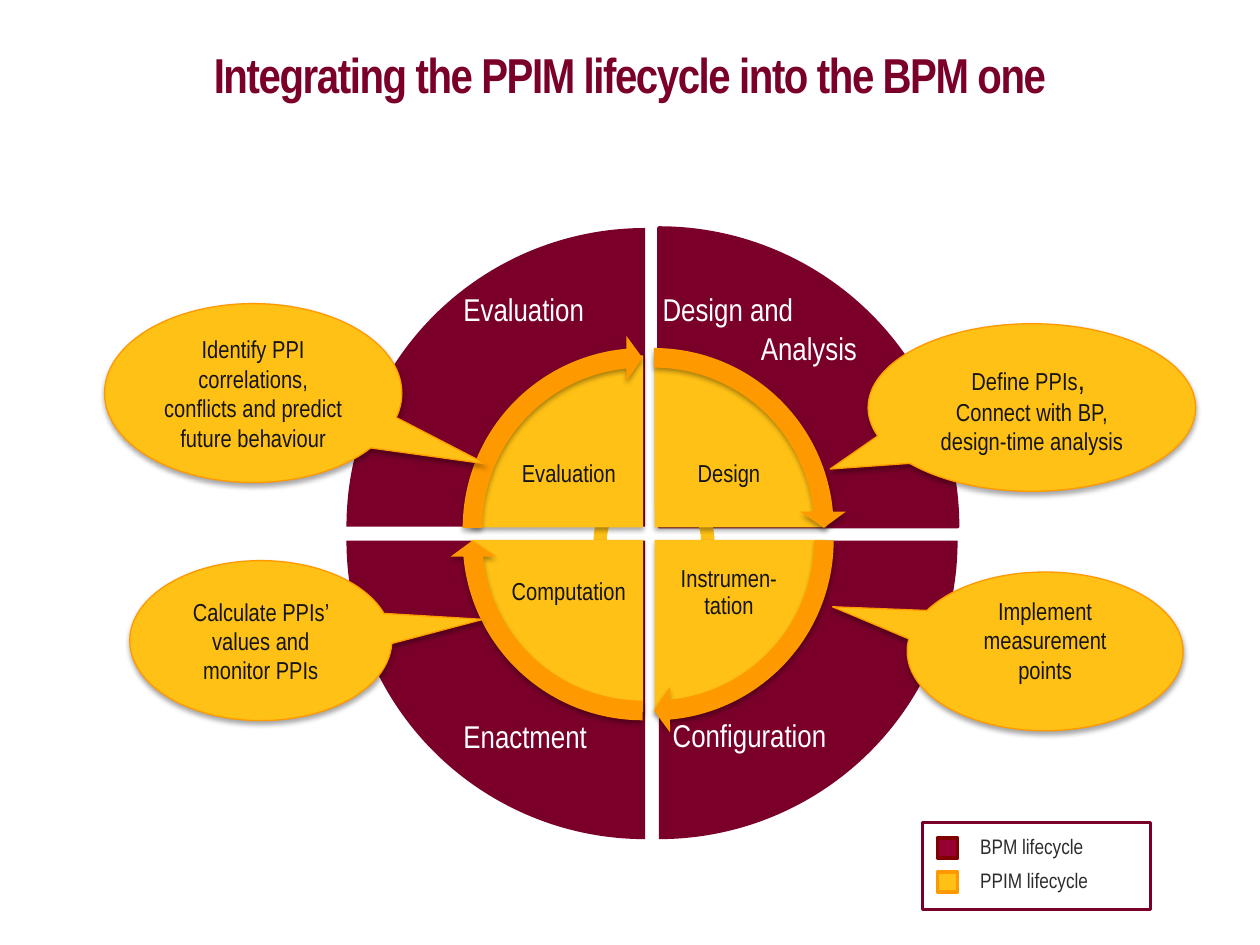
from lxml import etree
from pptx import Presentation
from pptx.dml.color import RGBColor
from pptx.enum.shapes import MSO_SHAPE
from pptx.enum.text import MSO_ANCHOR, PP_ALIGN
from pptx.oxml.ns import qn
from pptx.util import Inches, Pt

WEDGE, PIE, ARROW = MSO_SHAPE.PIE_WEDGE, MSO_SHAPE.PIE, MSO_SHAPE.CIRCULAR_ARROW
CALLOUT, RECTANGLE = MSO_SHAPE.OVAL_CALLOUT, MSO_SHAPE.RECTANGLE
LEFT, CENTER = PP_ALIGN.LEFT, PP_ALIGN.CENTER
TOP, MIDDLE = MSO_ANCHOR.TOP, MSO_ANCHOR.MIDDLE

FONT = "Arial Narrow"
COLORS = {
    "wine": "7A0029", "wine_edge": "7C002C", "key_wine": "960032", "key_edge": "800000",
    "gold": "FFC115", "orange": "FF9900", "white": "FFFFFF",
    "ink": "141414", "grey": "2C2C2C", "black": "000000",
}

TITLE = "Integrating the PPIM lifecycle into the BPM one"
WEDGES = [
    (2.75, 1.81, None),
    (5.23, 1.81, ("wine_edge", 2)),
    (5.23, 4.29, None),
    (2.75, 4.29, None),
]
HUB_ARROWS = [(4.62, 270), (4.94, 90)]
PPIM_PHASES = [
    ("Design", "right", "top"),
    ("Instrumen-tation", "right", "bottom"),
    ("Computation", "left", "bottom"),
    ("Evaluation", "left", "top"),
]
PIE_LEFT = {"left": 3.74, "right": 3.83}
PIE_TOP = {"top": 2.82, "bottom": 2.92}
LABEL_LEFT = {"left": 4.01, "right": 5.28}
LABEL_TOP = {"top": 3.39, "bottom": 4.33}
QUARTER, FULL_TURN = 54, 216
BPM_PHASES = [
    ("Design and", 5.16, 2.25),
    ("Analysis", 5.94, 2.56),
    ("Configuration", 5.24, 5.63),
    ("Enactment", 3.58, 5.64),
    ("Evaluation", 3.58, 2.25),
]
LEGEND = [
    ("BPM lifecycle", "key_wine", "key_edge"),
    ("PPIM lifecycle", "gold", "orange"),
]
CALLOUTS = [
    ([[("Define PPIs", 14), (", ", 18)], [("Connect with BP, design-time analysis", 14)]],
     (6.89, 2.57, 2.6, 1.33), (-0.616, 0.367), 0.05),
    ([[("Implement measurement points", 14)]],
     (7.2, 4.54, 2.19, 1.26), (-0.771, -0.281), 0.23),
    ([[("Calculate PPIs’ values and monitor PPIs", 14)]],
     (1.03, 4.45, 2.08, 1.27), (0.848, -0.133), 0.05),
    ([[("Identify PPI correlations, conflicts and predict future behaviour", 14)]],
     (0.83, 2.41, 2.36, 1.42), (0.783, 0.396), 0.05),
]


def color(name):
    return RGBColor.from_string(COLORS[name])


def add_shadow(shape):
    effects = shape._element.spPr.find(qn("a:effectLst"))
    shadow = etree.SubElement(effects, qn("a:outerShdw"), blurRad=str(Pt(3.1)),
                              dist=str(Pt(1.8)), dir="5400000", rotWithShape="0")
    tint = etree.SubElement(shadow, qn("a:srgbClr"), val=COLORS["black"])
    etree.SubElement(tint, qn("a:alpha"), val="35000")


def draw(page, kind, place, fill=None, line=None, adjust=(), rotation=0, shadow=False):
    shape = page.shapes.add_shape(kind, *map(Inches, place))
    shape.shadow.inherit = False
    shape.rotation = rotation
    for index, value in enumerate(adjust):
        shape.adjustments[index] = value
    if fill:
        shape.fill.solid()
        shape.fill.fore_color.rgb = color(fill)
    else:
        shape.fill.background()
    if line:
        shape.line.color.rgb = color(line[0])
        shape.line.width = Pt(line[1])
    else:
        shape.line.fill.background()
    if shadow:
        add_shadow(shape)
    return shape


def style(span, size, ink, bold=False):
    span.font.name = FONT
    span.font.size = Pt(size)
    span.font.bold = bold
    span.font.color.rgb = color(ink)


def write(page, text, place, size, ink, align=LEFT, anchor=TOP, bold=False):
    box = page.shapes.add_textbox(*map(Inches, place))
    frame = box.text_frame
    frame.word_wrap = True
    frame.vertical_anchor = anchor
    frame.text = text
    para = frame.paragraphs[0]
    para.alignment = align
    style(para.runs[0], size, ink, bold)
    return frame


def add_title(page):
    frame = write(page, TITLE, (0, 0.3, 10, 0.48), 28, "wine", CENTER, bold=True)
    frame.paragraphs[0].runs[0].font._element.set("spc", "-80")


def add_bpm_ring(page):
    for index, (left, top, line) in enumerate(WEDGES):
        draw(page, WEDGE, (left, top, 2.37, 2.37), "wine", line, rotation=90 * index)
    for left, rotation in HUB_ARROWS:
        draw(page, ARROW, (left, 3.93, 0.82, 0.71), "gold", ("gold", 1.25), rotation=rotation)


def add_ppim_ring(page):
    starts = [(162 + QUARTER * index) % FULL_TURN for index in range(len(PPIM_PHASES))]
    for (name, side, row), start in zip(PPIM_PHASES, starts):
        draw(page, PIE, (PIE_LEFT[side], PIE_TOP[row], 2.73, 2.73), "gold",
             adjust=(start, (start + QUARTER) % FULL_TURN), shadow=True)
        frame = write(page, name, (LABEL_LEFT[side], LABEL_TOP[row], 1.01, 0.75),
                      14, "ink", CENTER, MIDDLE)
        frame.margin_left = frame.margin_right = Inches(0.02)
        frame.margin_top = frame.margin_bottom = Inches(0.02)
        frame.paragraphs[0].line_spacing = 0.9
    for (name, side, row), start in zip(PPIM_PHASES, starts):
        draw(page, ARROW, (PIE_LEFT[side] - 0.17, PIE_TOP[row] - 0.16, 3.06, 3.06), "orange",
             adjust=(0.051, 3.275, start + 50.725, start, 0.059), shadow=True)


def add_legend(page):
    draw(page, RECTANGLE, (7.32, 6.53, 1.81, 0.69), line=("wine", 1.5))
    for index, (name, fill, edge) in enumerate(LEGEND):
        top = 6.65 + 0.27 * index
        draw(page, RECTANGLE, (7.44, top, 0.16, 0.16), fill, (edge, 2))
        write(page, name, (7.68, top - 0.08, 2.21, 0.3), 12, "grey")


def add_callouts(page):
    for paragraphs, place, tip, bottom in CALLOUTS:
        callout = draw(page, CALLOUT, place, "gold", ("orange", 0.75), tip, shadow=True)
        frame = callout.text_frame
        frame.word_wrap = True
        frame.vertical_anchor = MIDDLE
        frame.margin_bottom = Inches(bottom)
        for index, spans in enumerate(paragraphs):
            para = frame.add_paragraph() if index else frame.paragraphs[0]
            para.alignment = CENTER
            for text, size in spans:
                span = para.add_run()
                span.text = text
                style(span, size, "ink")


def main():
    deck = Presentation()
    deck.slide_width, deck.slide_height = Inches(10), Inches(7.5)
    page = deck.slides.add_slide(deck.slide_layouts[6])
    add_title(page)
    add_bpm_ring(page)
    add_ppim_ring(page)
    for name, left, top in BPM_PHASES:
        write(page, name, (left, top, 1.89, 0.4), 18, "white")
    add_legend(page)
    add_callouts(page)
    deck.save("out.pptx")


if __name__ == "__main__":
    main()
